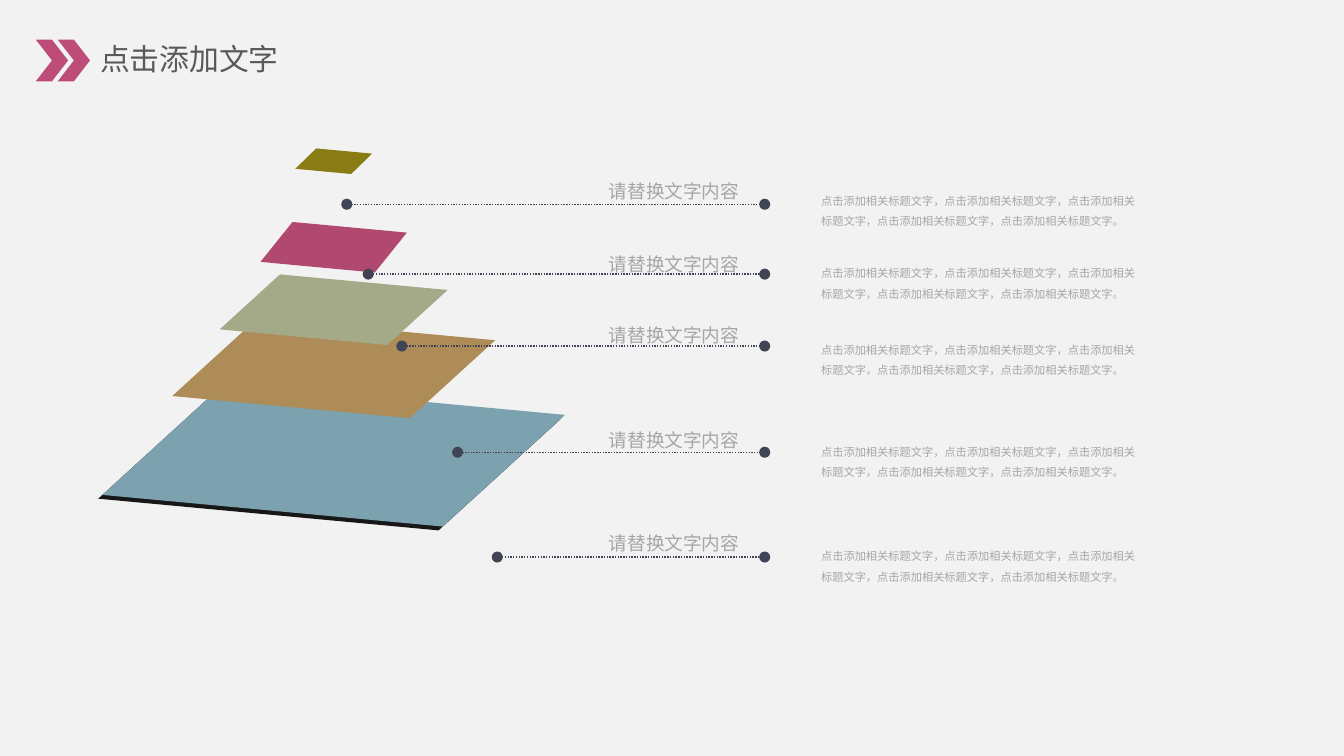
"""Builds a slide with a pyramid of five slanted plates and dotted callouts."""
from typing import NamedTuple

from lxml import etree
from pptx import Presentation
from pptx.dml.color import RGBColor
from pptx.enum.dml import MSO_LINE
from pptx.enum.shapes import MSO_CONNECTOR, MSO_SHAPE
from pptx.enum.text import MSO_ANCHOR, MSO_AUTO_SIZE, PP_ALIGN
from pptx.oxml.ns import qn
from pptx.util import Inches, Pt

CHEVRON = MSO_SHAPE.CHEVRON
STRAIGHT = MSO_CONNECTOR.STRAIGHT
DOTTED = MSO_LINE.ROUND_DOT
LEFT, RIGHT = PP_ALIGN.LEFT, PP_ALIGN.RIGHT
TOP, MIDDLE = MSO_ANCHOR.TOP, MSO_ANCHOR.MIDDLE
GROW = MSO_AUTO_SIZE.SHAPE_TO_FIT_TEXT

COLUMNS, ROWS = 100, 56.25
CELL = 0.1
PLATE_AXIS = 24.83
ACROSS = (0.945, 0.088)
DOWN = (-0.34, 0.31)
LINE_END = 56.9
ROSE, INK, GREY = "BD4D78", "414455", "A6A6A6"
SANS = "Noto Sans CJK SC"
LABEL = "请替换文字内容"
PHRASE = "点击添加相关标题文字"
DETAIL = "，".join([PHRASE] * 5) + "。"


class Area(NamedTuple):
    """A rectangle in grid columns and rows."""
    left: float
    top: float
    width: float
    height: float


class Plate(NamedTuple):
    """A slanted plate centred on the pyramid axis."""
    middle: float
    side: float
    colour: str
    down: tuple[float, float] = DOWN
    shaded: bool = False


class Callout(NamedTuple):
    """A dotted line with its label and detail text."""
    start: float
    row: float
    label_top: float
    detail_top: float


PLATES = [
    Plate(33.85, 26.8, "7CA1AF", shaded=True),
    Plate(27.4, 18.7, "AD8C57"),
    Plate(23.05, 13.2, "A4A988"),
    Plate(18.4, 9, "B0486F", (-0.265, 0.33)),
    Plate(12, 4.4, "8A7C14", (-0.355, 0.345)),
]
CALLOUTS = [
    Callout(25.8, 15.2, 12.65, 13.55),
    Callout(27.4, 20.4, 18.05, 18.95),
    Callout(29.9, 25.75, 23.4, 24.65),
    Callout(34.05, 33.65, 31.15, 32.25),
    Callout(37, 41.45, 38.85, 40),
]


def cells(count: float) -> int:
    """Turn a number of grid cells into a slide length."""
    return Inches(count * CELL)


def rgb(colour: str) -> RGBColor:
    """Turn a hex string into a colour."""
    return RGBColor.from_string(colour)


def paint(shape, colour: str) -> None:
    """Give a shape a flat fill without line or shadow."""
    shape.fill.solid()
    shape.fill.fore_color.rgb = rgb(colour)
    shape.line.fill.background()
    shape.shadow.inherit = False


def add_shadow(shape) -> None:
    """Give a painted shape a hard black shadow to its lower left."""
    effects = shape._element.spPr.find(qn("a:effectLst"))
    shadow = etree.SubElement(effects, qn("a:outerShdw"), blurRad="0",
                              dist=str(Pt(3)), dir=str(137 * 60000),
                              algn="ctr", rotWithShape="0")
    colour = etree.SubElement(shadow, qn("a:srgbClr"), val="000000")
    etree.SubElement(colour, qn("a:alpha"), val="90000")


def add_text(page, text: str, area: Area, *, size: float, colour: str = GREY,
             font: str = SANS, align=LEFT, anchor=TOP, spacing: float = 1.0,
             wrap: bool = True) -> None:
    """Place a one-paragraph text box."""
    box = page.shapes.add_textbox(*map(cells, area))
    frame = box.text_frame
    frame.word_wrap = wrap
    frame.auto_size = GROW
    frame.vertical_anchor = anchor
    frame.margin_left = frame.margin_right = Inches(0.07)
    frame.margin_top = frame.margin_bottom = Inches(0.04)
    para = frame.paragraphs[0]
    para.alignment = align
    para.line_spacing = spacing
    span = para.add_run()
    span.text = text
    span.font.size = Pt(size)
    span.font.name = font
    span.font.color.rgb = rgb(colour)
    etree.SubElement(span.font._element, qn("a:ea"), typeface=font)


def add_plate(page, plate: Plate) -> None:
    """Draw a plate as a parallelogram around its centre."""
    corners = []
    for across, down in ((-0.5, -0.5), (0.5, -0.5), (0.5, 0.5), (-0.5, 0.5)):
        shift_x, shift_y = (plate.side * (across * a + down * d)
                            for a, d in zip(ACROSS, plate.down))
        corners.append((cells(PLATE_AXIS + shift_x), cells(plate.middle + shift_y)))
    builder = page.shapes.build_freeform(*corners[0])
    builder.add_line_segments(corners[1:], close=True)
    shape = builder.convert_to_shape()
    paint(shape, plate.colour)
    if plate.shaded:
        add_shadow(shape)


def add_dotted_line(page, start: float, end: float, row: float) -> None:
    """Draw a horizontal dotted line with round ends."""
    connector = page.shapes.add_connector(
        STRAIGHT, cells(start), cells(row), cells(end), cells(row))
    connector.line.color.rgb = rgb(INK)
    connector.line.width = Pt(0.75)
    connector.line.dash_style = DOTTED
    line = connector.line._get_or_add_ln()
    for name in ("a:headEnd", "a:tailEnd"):
        etree.SubElement(line, qn(name), type="oval")
    etree.SubElement(connector._element.spPr, qn("a:effectLst"))


def add_callout(page, callout: Callout) -> None:
    """Draw a callout line with its two texts."""
    add_dotted_line(page, callout.start, LINE_END, callout.row)
    add_text(page, DETAIL, Area(60.4, callout.detail_top, 25.4, 3.7),
             size=6, spacing=1.5)
    add_text(page, LABEL, Area(44.4, callout.label_top, 11.3, 2.7), size=10,
             font="Arial", align=RIGHT, spacing=1.2, wrap=False)


def add_heading(page) -> None:
    """Draw the title with its two chevrons."""
    add_text(page, "点击添加文字", Area(6.75, 2.65, 19.6, 3.4), size=16,
             colour="595959", anchor=MIDDLE)
    for left in (2.67, 4.3):
        area = Area(left, 2.95, 2.4, 3.1)
        paint(page.shapes.add_shape(CHEVRON, *map(cells, area)), ROSE)


def main() -> None:
    """Build and save the deck."""
    deck = Presentation()
    deck.slide_width, deck.slide_height = cells(COLUMNS), cells(ROWS)
    page = deck.slides.add_slide(deck.slide_layouts[6])
    page.background.fill.solid()
    page.background.fill.fore_color.rgb = rgb("F2F2F2")
    add_heading(page)
    for plate in PLATES:
        add_plate(page, plate)
    for callout in CALLOUTS:
        add_callout(page, callout)
    deck.save("out.pptx")


if __name__ == "__main__":
    main()
